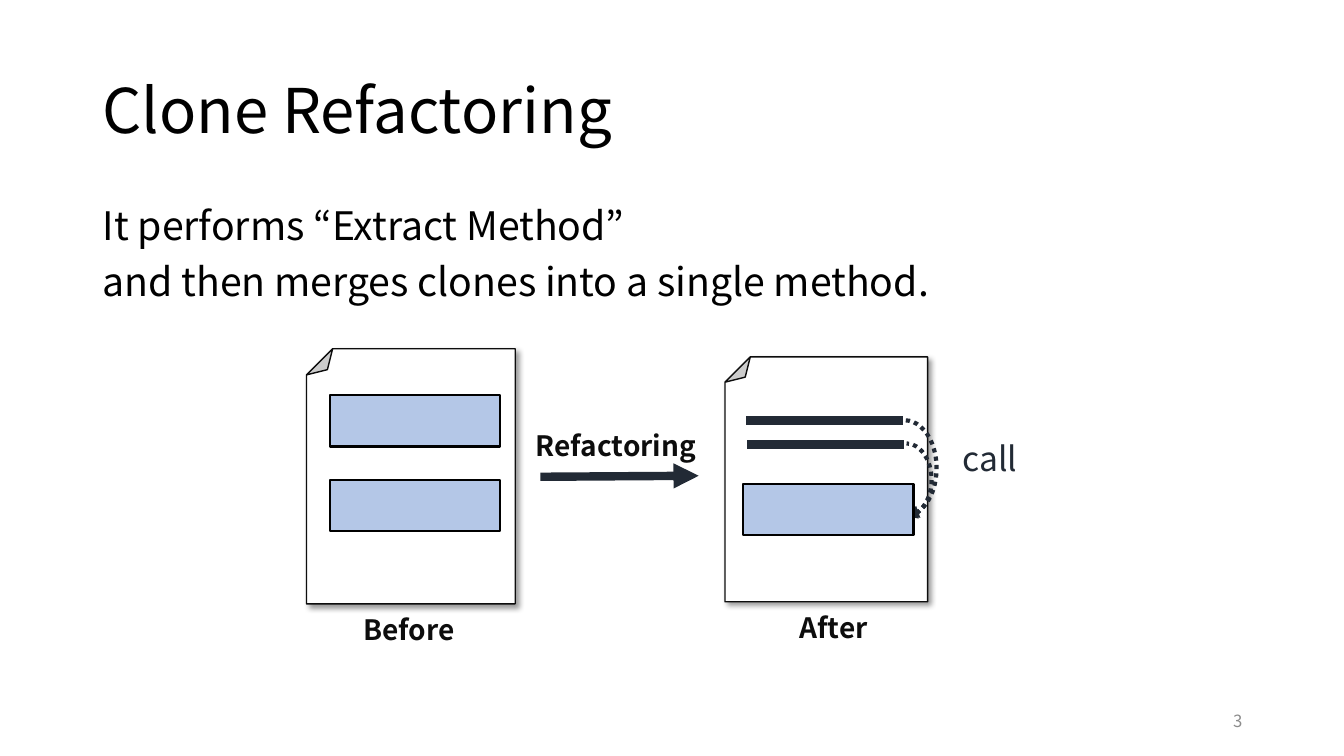
import pptx
import pptx.util
import pptx.dml.color
import pptx.enum.dml
import pptx.enum.shapes
import pptx.enum.text
import pptx.oxml
import pptx.oxml.ns

Inches = pptx.util.Inches
Pt = pptx.util.Pt
qn = pptx.oxml.ns.qn
SHAPE = pptx.enum.shapes.MSO_SHAPE
ALIGN = pptx.enum.text.PP_ALIGN
ANCHOR = pptx.enum.text.MSO_ANCHOR

FONT = "Noto Sans CJK JP"
COLORS = {
    "text": "000000",
    "ink": "0D0D0D",
    "navy": "222A35",
    "clone": "B4C7E7",
    "page": "FFFFFF",
    "number": "8C8C8C",
}

TITLE = ["Clone Refactoring"]
BODY = ["It performs “Extract Method”", "and then merges clones into a single method."]
LABELS = [
    ("Before", (2.99, 6.03, 2.13, 0.44)),
    ("After", (7.24, 6.01, 2.06, 0.44)),
    ("Refactoring", (5.13, 4.2, 1.96, 0.44)),
]
PAGES = [(3.04, 3.46, 2.07, 2.53), (7.19, 3.54, 2.01, 2.43)]
CLONE_SIZE = (1.69, 0.51)
CLONES = [(3.27, 3.92), (3.27, 4.76), (7.37, 4.8)]
CALL_ARCS = [(8.66, 4.17, 0.63, 0.95), (8.74, 4.4, 0.5, 0.72)]
CALL_LINES = [((7.4, 4.17), (8.96, 4.17)), ((7.41, 4.41), (8.97, 4.41))]
REFACTORING_ARROW = ((5.36, 4.73), (6.93, 4.72))

SHADOW = (
    '<a:effectLst %s><a:outerShdw blurRad="50800" dist="38100" dir="2700000" '
    'algn="tl" rotWithShape="0"><a:srgbClr val="000000"><a:alpha val="40000"/>'
    "</a:srgbClr></a:outerShdw></a:effectLst>" % pptx.oxml.ns.nsdecls("a")
)


def rgb(name):
    return pptx.dml.color.RGBColor.from_string(COLORS[name])


def add_xml(parent, tag, **attributes):
    element = pptx.oxml.parse_xml("<a:%s %s/>" % (tag, pptx.oxml.ns.nsdecls("a")))
    for name, value in attributes.items():
        element.set(name, value)
    parent.append(element)


def add_arrowhead(shape, end):
    add_xml(shape.element.spPr.find(qn("a:ln")), end, type="triangle")


def set_line(line, color, width):
    line.color.rgb = rgb(color)
    line.width = Pt(width)


def add_text(slide, box, lines, size, color, bold=False, align=ALIGN.LEFT,
             anchor=ANCHOR.TOP, line_spacing=None, space_before=None):
    shape = slide.shapes.add_textbox(*map(Inches, box))
    frame = shape.text_frame
    frame.word_wrap = True
    frame.vertical_anchor = anchor
    for index, text in enumerate(lines):
        paragraph = frame.add_paragraph() if index else frame.paragraphs[0]
        paragraph.alignment = align
        paragraph.line_spacing = line_spacing
        paragraph.space_before = space_before
        run = paragraph.add_run()
        run.text = text
        run.font.name = FONT
        run.font.size = Pt(size)
        run.font.bold = bold
        run.font.color.rgb = rgb(color)


def add_box(slide, kind, box, fill, line_color, line_width):
    shape = slide.shapes.add_shape(kind, *map(Inches, box))
    shape.shadow.inherit = False
    if fill:
        shape.fill.solid()
        shape.fill.fore_color.rgb = rgb(fill)
    else:
        shape.fill.background()
    set_line(shape.line, line_color, line_width)
    return shape


def add_page(slide, box):
    page = add_box(slide, SHAPE.FOLDED_CORNER, box, "page", "ink", 1)
    page.rotation = 180
    properties = page.element.spPr
    guides = properties.find(qn("a:prstGeom")).find(qn("a:avLst"))
    add_xml(guides, "gd", name="adj", fmla="val 12500")
    properties.remove(properties.find(qn("a:effectLst")))
    properties.append(pptx.oxml.parse_xml(SHADOW))


def add_call_arc(slide, box):
    arc = add_box(slide, SHAPE.ARC, box, None, "navy", 3)
    arc.adjustments[0] = 162
    arc.adjustments[1] = 53.823
    arc.element.spPr.find(qn("a:xfrm")).set("flipV", "1")
    arc.line.dash_style = pptx.enum.dml.MSO_LINE.ROUND_DOT
    add_arrowhead(arc, "headEnd")


def add_line(slide, start, end, arrow=False):
    line = slide.shapes.add_connector(
        pptx.enum.shapes.MSO_CONNECTOR.STRAIGHT, *map(Inches, start + end))
    set_line(line.line, "navy", 6)
    if arrow:
        add_arrowhead(line, "tailEnd")
    add_xml(line.element.spPr, "effectLst")


def main():
    presentation = pptx.Presentation()
    presentation.slide_width = Inches(13.33)
    presentation.slide_height = Inches(7.5)
    slide = presentation.slides.add_slide(presentation.slide_layouts[6])

    add_text(slide, (0.92, 0.4, 11.5, 1.45), TITLE, 44, "text",
             anchor=ANCHOR.MIDDLE, line_spacing=0.9)
    add_text(slide, (0.92, 2, 8.98, 1.32), BODY, 28, "text",
             line_spacing=0.9, space_before=Pt(10))
    for box in PAGES:
        add_page(slide, box)
    for text, box in LABELS:
        add_text(slide, box, [text], 20, "ink", bold=True, align=ALIGN.CENTER)
    add_text(slide, (9.45, 4.3, 0.9, 0.5), ["call"], 24, "navy")
    for box in CALL_ARCS:
        add_call_arc(slide, box)
    for start, end in CALL_LINES:
        add_line(slide, start, end)
    for corner in CLONES:
        add_box(slide, SHAPE.RECTANGLE, corner + CLONE_SIZE, "clone", "text", 1.5)
    add_line(slide, *REFACTORING_ARROW, arrow=True)
    add_text(slide, (9.42, 6.95, 3, 0.4), ["3"], 12, "number",
             align=ALIGN.RIGHT, anchor=ANCHOR.MIDDLE)

    presentation.save("out.pptx")


if __name__ == "__main__":
    main()
